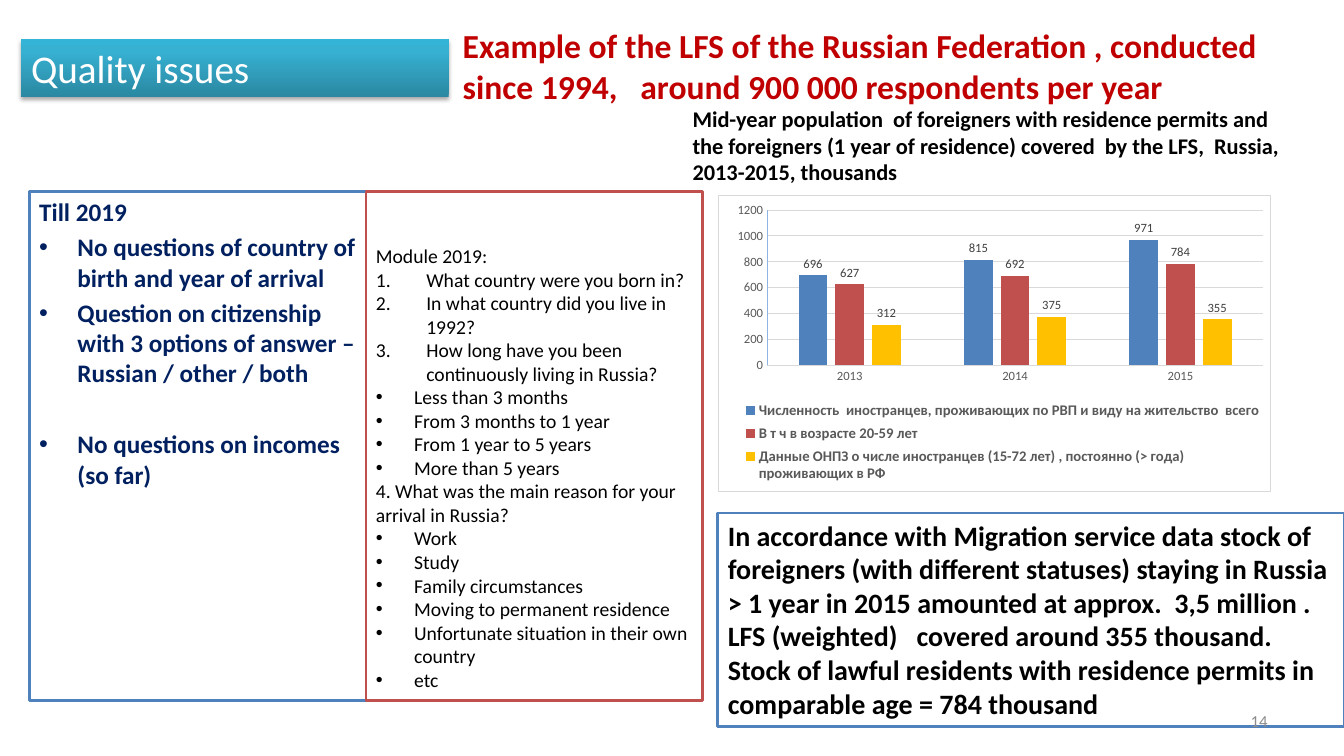
from copy import deepcopy
from dataclasses import dataclass

from pptx import Presentation
from pptx.chart.data import CategoryChartData
from pptx.dml.color import RGBColor
from pptx.enum.chart import XL_CHART_TYPE as ChartType
from pptx.enum.chart import XL_LABEL_POSITION as LabelPosition
from pptx.enum.chart import XL_LEGEND_POSITION as LegendPosition
from pptx.enum.chart import XL_TICK_MARK as TickMark
from pptx.enum.shapes import MSO_SHAPE as Preset
from pptx.enum.text import MSO_ANCHOR as Anchor
from pptx.enum.text import PP_ALIGN as Align
from pptx.oxml import parse_xml
from pptx.oxml.ns import nsdecls, qn
from pptx.util import Emu, Pt

EMU_PER_PX = 9144
FONT = "Calibri"


@dataclass(frozen=True)
class Line:
    text: str
    bullet: str = ""
    indent: int = 0
    before: float = 0


@dataclass(frozen=True)
class TextBlock:
    at: tuple[int, int, int, int]
    lines: list[Line]
    size: int
    colour: str = "000000"
    bold: bool = False
    border: str = ""
    anchor: Anchor = Anchor.TOP
    align: Align = Align.LEFT
    top_inset: int = 5


@dataclass(frozen=True)
class Series:
    name: str
    values: tuple[int, ...]
    colour: str


def px(length: int) -> Emu:
    return Emu(length * EMU_PER_PX)


def rgb(code: str) -> RGBColor:
    return RGBColor.from_string(code)


def style_font(font, size: float, colour: str, bold: bool = False) -> None:
    font.name, font.size, font.bold = FONT, Pt(size), bold
    font.color.rgb = rgb(colour)


def style_line(line, colour: str, width: float) -> None:
    line.color.rgb = rgb(colour)
    line.width = Pt(width)


def add_bullet(para, bullet: str, indent: int) -> None:
    properties = para._p.get_or_add_pPr()
    properties.set("marL", str(px(indent)))
    properties.set("indent", str(px(-indent)))
    marks = ['buFont {} typeface="Arial"', 'buChar {} char="•"'] if bullet == "•" else [
        'buAutoNum {} type="arabicPeriod"']
    for mark in marks:
        properties.append(parse_xml(f'<a:{mark.format(nsdecls("a"))}/>'))


def write_text(box, block: TextBlock) -> None:
    frame = box.text_frame
    frame.word_wrap = True
    frame.vertical_anchor = block.anchor
    frame.margin_top = px(block.top_inset)
    for index, line in enumerate(block.lines):
        para = frame.add_paragraph() if index else frame.paragraphs[0]
        para.alignment = block.align
        para.space_before = Pt(line.before)
        if line.bullet:
            add_bullet(para, line.bullet, line.indent)
        span = para.add_run()
        span.text = line.text
        style_font(span.font, block.size, block.colour, block.bold)


def add_block(page, block: TextBlock) -> None:
    at = map(px, block.at)
    if block.border:
        box = page.shapes.add_shape(Preset.RECTANGLE, *at)
        box.shadow.inherit = False
        box.fill.solid()
        box.fill.fore_color.rgb = rgb("FFFFFF")
        style_line(box.line, block.border, 2)
    else:
        box = page.shapes.add_textbox(*at)
    write_text(box, block)


def add_banner(page, block: TextBlock) -> None:
    banner = page.shapes.add_shape(Preset.RECTANGLE, *map(px, block.at))
    banner.shadow.inherit = False
    banner.line.fill.background()
    banner.fill.gradient()
    banner.fill.gradient_angle = 90
    stops = banner._element.spPr.find(f'.//{qn("a:gsLst")}')
    stops.append(deepcopy(stops[-1]))
    shades = [(0, "2A88A2"), (0.8, "37B1D2"), (1, "34B4D6")]
    for stop, (position, colour) in zip(banner.fill.gradient_stops, shades):
        stop.position = position
        stop.color.rgb = rgb(colour)
    banner._element.spPr.find(qn("a:effectLst")).append(parse_xml(
        f'<a:outerShdw {nsdecls("a")} blurRad="39370" dist="22860" dir="5400000" rotWithShape="0">'
        '<a:srgbClr val="000000"><a:alpha val="35000"/></a:srgbClr></a:outerShdw>'))
    write_text(banner, block)


def place_part(part, index: int, **places: str | float) -> None:
    for old in part.findall(qn("c:layout")):
        part.remove(old)
    items = "".join(f'<c:{key} val="{value}"/>' for key, value in places.items())
    part.insert(index, parse_xml(f'<c:layout {nsdecls("c")}><c:manualLayout>{items}</c:manualLayout></c:layout>'))


def add_population_chart(page, at: tuple[int, int, int, int], years: list[str], series: list[Series]) -> None:
    data = CategoryChartData(number_format="0")
    data.categories = years
    for item in series:
        data.add_series(item.name, item.values)
    chart = page.shapes.add_chart(ChartType.COLUMN_CLUSTERED, *map(px, at), data).chart
    style_font(chart.font, 10, "000000")
    chart.has_title = False
    chart.has_legend = True
    chart.legend.position = LegendPosition.BOTTOM
    chart.legend.include_in_layout = False
    style_font(chart.legend.font, 10.5, "595959", True)
    for axis, colour in ((chart.category_axis, "D9D9D9"), (chart.value_axis, "8EB4E3")):
        axis.major_tick_mark = axis.minor_tick_mark = TickMark.NONE
        style_font(axis.tick_labels.font, 9, "595959")
        style_line(axis.format.line, colour, 0.75)
    values = chart.value_axis
    values.minimum_scale, values.maximum_scale, values.major_unit = 0, 1200, 200
    style_line(values.major_gridlines.format.line, "D9D9D9", 0.75)
    plot = chart.plots[0]
    plot.vary_by_categories = False
    plot.gap_width, plot.overlap = 219, -27
    for bars, item in zip(plot.series, series):
        bars.format.fill.solid()
        bars.format.fill.fore_color.rgb = rgb(item.colour)
        labels = bars.data_labels
        labels.show_value = True
        labels.position = LabelPosition.OUTSIDE_END
        style_font(labels.font, 9, "404040")
    root = chart._chartSpace
    place_part(root.chart.plotArea, 0, layoutTarget="inner", xMode="edge", yMode="edge",
               x=0.088, y=0.051, w=0.898, h=0.524)
    place_part(chart.legend._element, 1, xMode="edge", yMode="edge", x=0.04, y=0.68, w=0.95, h=0.31)
    root.chart.addnext(parse_xml(
        f'<c:spPr {nsdecls("c", "a")}><a:solidFill><a:srgbClr val="FFFFFF"/></a:solidFill>'
        '<a:ln w="9525"><a:solidFill><a:srgbClr val="D9D9D9"/></a:solidFill></a:ln></c:spPr>'))


def listed(bullet: str, indent: int, *texts: str) -> list[Line]:
    return [Line(text, bullet, indent) for text in texts]


TITLE = TextBlock((449, 15, 848, 100), [Line(
    "Example of the LFS of the Russian Federation , conducted since 1994,   around 900 000 respondents per year")],
    24, "C00000", True, anchor=Anchor.MIDDLE)
TILL_2019 = TextBlock((29, 190, 339, 505), [
    Line("Till 2019"),
    Line("No questions of country of birth and year of arrival", "•", 38, 3.6),
    Line("Question on citizenship with 3 options of answer – Russian / other / both", "•", 38, 3.6),
    Line("No questions on incomes (so far)", "•", 38, 29)], 18, "002060", True, "4F81BD")
CHART_TITLE = TextBlock((677, 99, 619, 91), [Line(
    "Mid-year population  of foreigners with residence permits and the foreigners (1 year of residence) "
    "covered  by the LFS,  Russia, 2013-2015, thousands")], 16, bold=True)
CONCLUSION = TextBlock((712, 509, 621, 212), [Line(
    "In accordance with Migration service data stock of foreigners (with different statuses) staying in Russia "
    "> 1 year in 2015 amounted at approx.  3,5 million . LFS (weighted)   covered around 355 thousand. "
    "Stock of lawful residents with residence permits in  comparable age = 784 thousand")],
    20, bold=True, border="4F81BD")
PAGE_NUMBER = TextBlock((956, 695, 311, 40), [Line("14")], 12, "8C8C8C", anchor=Anchor.MIDDLE, align=Align.RIGHT)
BANNER = TextBlock((21, 39, 424, 57), [Line("Quality issues")], 28, "FFFFFF")
MODULE_2019 = TextBlock((363, 190, 334, 505), [
    Line("Module 2019:"),
    *listed("1.", 50, "What country were you born in?", "In what country did you live in 1992?",
            "How long have you been continuously living in Russia?"),
    *listed("•", 38, "Less than 3 months", "From 3 months to 1 year", "From 1 year to 5 years", "More than 5 years"),
    Line("4. What was the main reason for your arrival in Russia?"),
    *listed("•", 38, "Work", "Study", "Family circumstances", "Moving to permanent residence",
            "Unfortunate situation in their own country", "etc")], 14, border="C0504D", top_inset=52)
POPULATION = [
    Series("Численность  иностранцев, проживающих по РВП и виду на жительство  всего", (696, 815, 971), "4F81BD"),
    Series("В т ч в возрасте 20-59 лет", (627, 692, 784), "C0504D"),
    Series("Данные ОНПЗ о числе иностранцев (15-72 лет) , постоянно (> года) проживающих в РФ",
           (312, 375, 355), "FFC000")]


def main() -> None:
    deck = Presentation()
    deck.slide_width, deck.slide_height = px(1333), px(750)
    page = deck.slides.add_slide(deck.slide_layouts[6])
    for block in (TITLE, TILL_2019, CHART_TITLE):
        add_block(page, block)
    add_population_chart(page, (712, 193, 549, 295), ["2013", "2014", "2015"], POPULATION)
    for block in (CONCLUSION, PAGE_NUMBER):
        add_block(page, block)
    add_banner(page, BANNER)
    add_block(page, MODULE_2019)
    deck.save("out.pptx")


if __name__ == "__main__":
    main()
